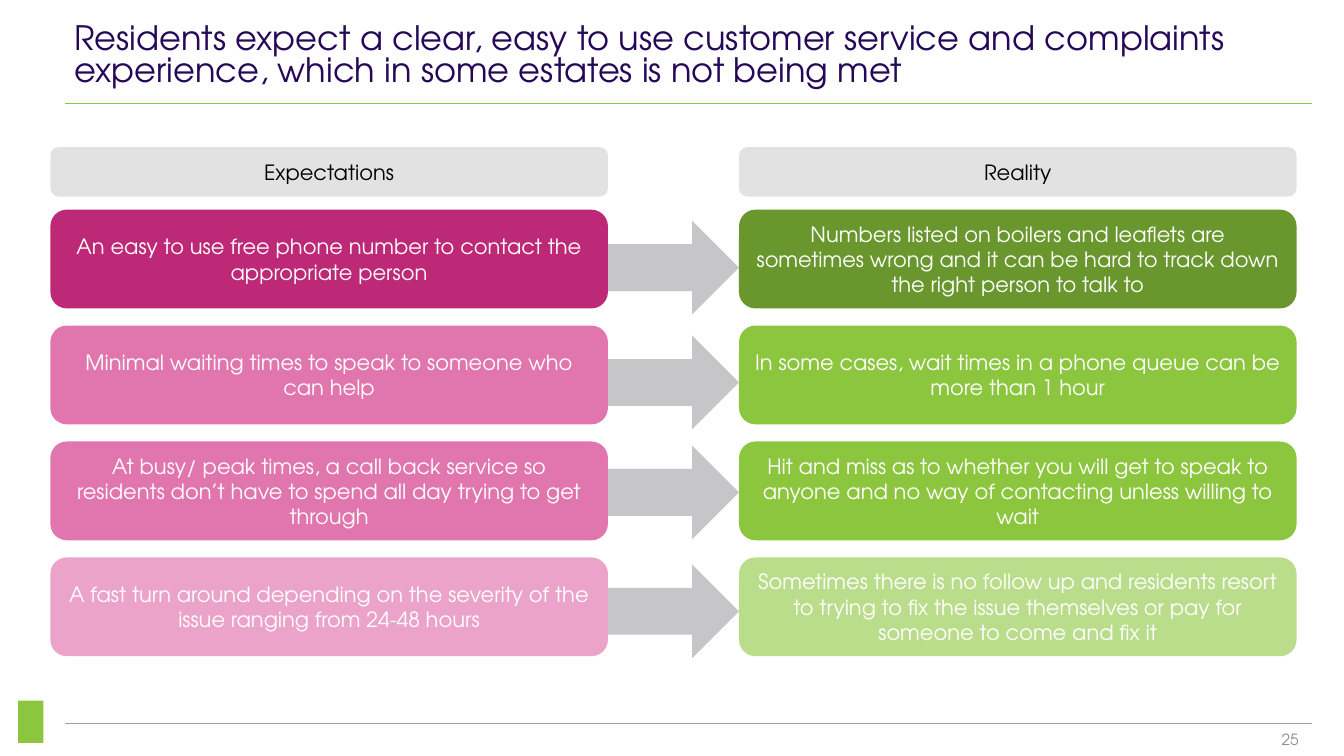
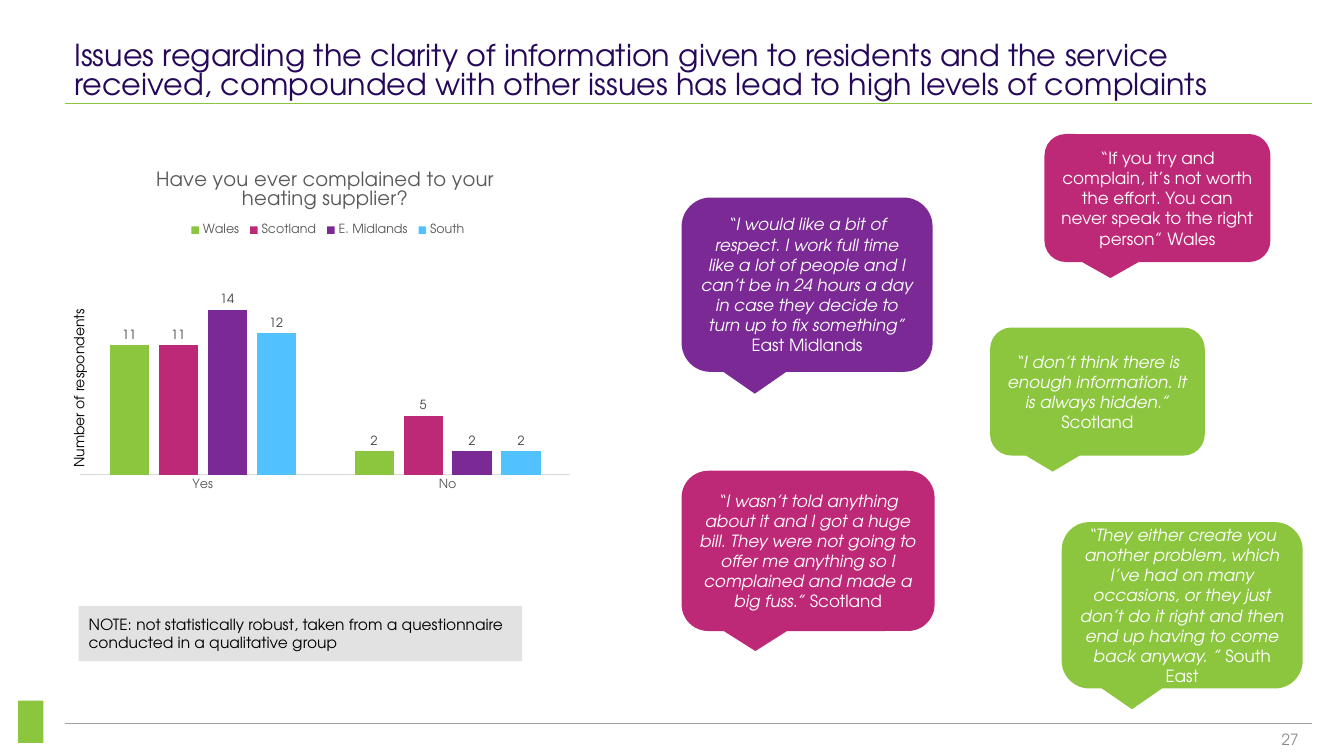
from lxml import etree
from pptx import Presentation
from pptx.chart.data import CategoryChartData
from pptx.dml.color import RGBColor
from pptx.enum.chart import XL_CHART_TYPE, XL_LABEL_POSITION, XL_LEGEND_POSITION, XL_TICK_MARK
from pptx.enum.shapes import MSO_CONNECTOR, MSO_SHAPE
from pptx.enum.text import MSO_ANCHOR, PP_ALIGN
from pptx.oxml.ns import qn
from pptx.util import Inches, Pt

RECT = MSO_SHAPE.RECTANGLE
ROUNDED = MSO_SHAPE.ROUNDED_RECTANGLE
ARROW = MSO_SHAPE.RIGHT_ARROW
CALLOUT = MSO_SHAPE.ROUNDED_RECTANGULAR_CALLOUT
STRAIGHT = MSO_CONNECTOR.STRAIGHT
LEFT, CENTER, RIGHT = PP_ALIGN.LEFT, PP_ALIGN.CENTER, PP_ALIGN.RIGHT
MIDDLE, BOTTOM, TOP = MSO_ANCHOR.MIDDLE, MSO_ANCHOR.BOTTOM, MSO_ANCHOR.TOP
CLUSTERED = XL_CHART_TYPE.COLUMN_CLUSTERED
OUTSIDE_END = XL_LABEL_POSITION.OUTSIDE_END
LEGEND_TOP = XL_LEGEND_POSITION.TOP
NO_TICK = XL_TICK_MARK.NONE

FONT = "TeX Gyre Adventor"
BLACK = RGBColor(0x00, 0x00, 0x00)
WHITE = RGBColor(0xFF, 0xFF, 0xFF)
NAVY = RGBColor(0x26, 0x08, 0x59)
GREEN = RGBColor(0x8C, 0xC6, 0x3F)
DARK_GREEN = RGBColor(0x69, 0x97, 0x2D)
PALE_GREEN = RGBColor(0xBA, 0xDD, 0x8C)
MAGENTA = RGBColor(0xBE, 0x29, 0x77)
PINK = RGBColor(0xE1, 0x75, 0xAE)
PALE_PINK = RGBColor(0xEB, 0xA3, 0xC9)
PURPLE = RGBColor(0x7A, 0x29, 0x95)
SKY = RGBColor(0x52, 0xC2, 0xFF)
PANEL = RGBColor(0xE3, 0xE2, 0xE3)
ARROW_GREY = RGBColor(0xC6, 0xC6, 0xC8)
RULE_GREY = RGBColor(0xA0, 0xA0, 0xA0)
PAGE_GREY = RGBColor(0x8C, 0x8C, 0x8C)
AXIS_GREY = RGBColor(0xD9, 0xD9, 0xD9)
CHART_TEXT = RGBColor(0x59, 0x59, 0x59)
LABEL_TEXT = RGBColor(0x40, 0x40, 0x40)

COLUMNS = [("Expectations", 0.5), ("Reality", 7.33)]
BOX_W, BOX_H = 5.53, 0.98
ROW_TOP, ROW_PITCH = 2.08, 1.15
ARROW_W, ARROW_H = 2.53, 0.93

ROWS = [
    (2.19,
     ("An easy to use free phone number to contact the appropriate person", MAGENTA),
     ("Numbers listed on boilers and leaflets are sometimes wrong and it can be hard "
      "to track down the right person to talk to", DARK_GREEN)),
    (3.33,
     ("Minimal waiting times to speak to someone who can help", PINK),
     ("In some cases, wait times in a phone queue can be more than 1 hour", GREEN)),
    (4.42,
     ("At busy/ peak times, a call back service so residents don’t have to spend all "
      "day trying to get through", PINK),
     ("Hit and miss as to whether you will get to speak to anyone and no way of "
      "contacting unless willing to wait", GREEN)),
    (5.6,
     ("A fast turn around depending on the severity of the issue ranging from 24-48 hours",
      PALE_PINK),
     ("Sometimes there is no follow up and residents resort to trying to fix the issue "
      "themselves or pay for someone to come and fix it", PALE_GREEN)),
]

QUOTES = [
    ((6.76, 1.96, 2.49, 1.73), PURPLE, True,
     "“I would like a bit of respect. I work full time like a lot of people and I can’t "
     "be in 24 hours a day in case they decide to turn up to fix something” ",
     "East Midlands"),
    ((9.82, 3.25, 2.13, 1.27), GREEN, True,
     "“I don’t think there is enough information. It is always hidden.” ", "Scotland"),
    ((6.76, 4.67, 2.51, 1.59), MAGENTA, True,
     "“I wasn’t told anything about it and I got a huge bill. They were not going to "
     "offer me anything so I complained and made a big fuss.” ", "Scotland"),
    ((10.36, 1.33, 2.24, 1.27), MAGENTA, False,
     "“If you try and complain, it’s not worth the effort. You can never speak to the "
     "right person” ", "Wales"),
    ((10.53, 5.18, 2.39, 1.65), GREEN, True,
     "“They either create you another problem, which I’ve had on many occasions, or "
     "they just don’t do it right and then end up having to come back anyway. ” ",
     "South East"),
]

SERIES = [
    ("Wales", (11, 2), GREEN),
    ("Scotland", (11, 5), MAGENTA),
    ("E. Midlands", (14, 2), PURPLE),
    ("South", (12, 2), SKY),
]


def style_font(font, size, color):
    font.name = FONT
    font.size = Pt(size)
    font.color.rgb = color


def write(sp, text, size, color, align=LEFT, anchor=MIDDLE):
    tf = sp.text_frame
    tf.word_wrap = True
    tf.vertical_anchor = anchor
    tf.text = text
    p = tf.paragraphs[0]
    p.alignment = align
    style_font(p.runs[0].font, size, color)
    return p


def add_text(slide, box, text, size, color, align=LEFT, anchor=TOP):
    sp = slide.shapes.add_textbox(*map(Inches, box))
    return sp, write(sp, text, size, color, align, anchor)


def add_block(slide, kind, box, fill):
    sp = slide.shapes.add_shape(kind, *map(Inches, box))
    sp.shadow.inherit = False
    sp.fill.solid()
    sp.fill.fore_color.rgb = fill
    sp.line.fill.background()
    return sp


def add_rule(slide, y, color):
    line = slide.shapes.add_connector(
        STRAIGHT, Inches(0.64), Inches(y), Inches(13.01), Inches(y))
    line.line.color.rgb = color
    line.line.width = Pt(0.5)
    etree.SubElement(line._element.spPr, qn("a:effectLst"))


def add_page(prs, title, title_top, title_size, number):
    slide = prs.slides.add_slide(prs.slide_layouts[6])
    add_rule(slide, 7.18, RULE_GREY)
    add_block(slide, RECT, (0.18, 6.95, 0.25, 0.42), GREEN)
    add_rule(slide, 1.03, GREEN)
    add_text(slide, (11.91, 7.19, 1.07, 0.27), number, 11, PAGE_GREY, RIGHT)
    _, p = add_text(slide, (0.64, title_top, 12.36, 0.82), title, title_size, NAVY,
                    anchor=BOTTOM)
    p.line_spacing = 0.8
    return slide


def add_quote(slide, box, fill, italic, quote, place):
    sp = add_block(slide, CALLOUT, box, fill)
    p = write(sp, quote, 12, WHITE, CENTER)
    p.runs[0].font.italic = italic
    r = p.add_run()
    r.text = place
    style_font(r.font, 12, WHITE)


def set_layout(parent, index, inner=False, **fractions):
    for old in parent.findall(qn("c:layout")):
        parent.remove(old)
    layout = etree.Element(qn("c:layout"))
    manual = etree.SubElement(layout, qn("c:manualLayout"))
    settings = [("layoutTarget", "inner")] if inner else []
    settings += [("xMode", "edge"), ("yMode", "edge"), *fractions.items()]
    for name, value in settings:
        etree.SubElement(manual, qn("c:" + name)).set("val", str(value))
    parent.insert(index, layout)


def add_complaints_chart(slide):
    data = CategoryChartData()
    data.categories = ["Yes", "No"]
    for name, values, _ in SERIES:
        data.add_series(name, values)
    box = map(Inches, (0.64, 1.52, 5.17, 3.47))
    chart = slide.shapes.add_chart(CLUSTERED, *box, data).chart
    style_font(chart.font, 10, BLACK)

    tf = chart.chart_title.text_frame
    tf.text = "Have you ever complained to your heating supplier?"
    r = tf.paragraphs[0].runs[0]
    style_font(r.font, 14, CHART_TEXT)
    r.font.bold = False
    chart.chart_title.include_in_layout = False

    chart.has_legend = True
    legend = chart.legend
    legend.position = LEGEND_TOP
    legend.include_in_layout = False
    style_font(legend.font, 9, CHART_TEXT)
    set_layout(legend._element, 1, x=0.23, y=0.19, w=0.55, h=0.06)

    axis = chart.category_axis
    axis.major_tick_mark = axis.minor_tick_mark = NO_TICK
    axis.format.line.color.rgb = AXIS_GREY
    axis.format.line.width = Pt(0.75)
    style_font(axis.tick_labels.font, 9, CHART_TEXT)
    chart.value_axis.visible = False
    chart.value_axis.has_major_gridlines = False
    chart.value_axis.minimum_scale = 0
    chart.value_axis.maximum_scale = 16

    plot = chart.plots[0]
    plot.vary_by_categories = False
    plot.gap_width = 150
    plot.overlap = -25
    for series, (_, _, color) in zip(plot.series, SERIES):
        series.format.fill.solid()
        series.format.fill.fore_color.rgb = color
        labels = series.data_labels
        labels.show_value = True
        labels.position = OUTSIDE_END
        style_font(labels.font, 9, LABEL_TEXT)
    plot_area = chart._chartSpace.xpath("c:chart/c:plotArea")[0]
    set_layout(plot_area, 0, inner=True, x=0.03, y=0.38, w=0.94, h=0.54)


def build_expectations(prs):
    slide = add_page(
        prs, "Residents expect a clear, easy to use customer service and complaints "
        "experience, which in some estates is not being met", 0.11, 24, "25")
    for arrow_top, *_ in ROWS:
        add_block(slide, ARROW, (COLUMNS[1][1] - ARROW_W, arrow_top, ARROW_W, ARROW_H),
                  ARROW_GREY)
    for heading, left in COLUMNS:
        sp = add_block(slide, ROUNDED, (left, 1.46, BOX_W, 0.49), PANEL)
        write(sp, heading, 15, BLACK, CENTER)
    for i, (_, *cells) in enumerate(ROWS):
        for (_, left), (text, fill) in zip(COLUMNS, cells):
            box = (left, ROW_TOP + i * ROW_PITCH, BOX_W, BOX_H)
            write(add_block(slide, ROUNDED, box, fill), text, 15, WHITE, CENTER)


def build_complaints(prs):
    slide = add_page(
        prs, "Issues regarding the clarity of information given to residents and the "
        "service received, compounded with other issues has lead to high levels of "
        "complaints", 0.23, 21.6, "27")
    note = add_block(slide, RECT, (0.78, 6.01, 4.4, 0.55), PANEL)
    write(note, "NOTE: not statistically robust, taken from a questionnaire conducted "
          "in a qualitative group", 11, BLACK)
    for quote in QUOTES:
        add_quote(slide, *quote)
    add_complaints_chart(slide)
    sp, _ = add_text(slide, (-0.7, 3.12, 2.97, 0.27), "Number of respondents", 10, BLACK)
    sp.rotation = 270


def main():
    prs = Presentation()
    prs.slide_width = Inches(13.33)
    prs.slide_height = Inches(7.5)
    build_expectations(prs)
    build_complaints(prs)
    prs.save("out.pptx")


if __name__ == "__main__":
    main()
